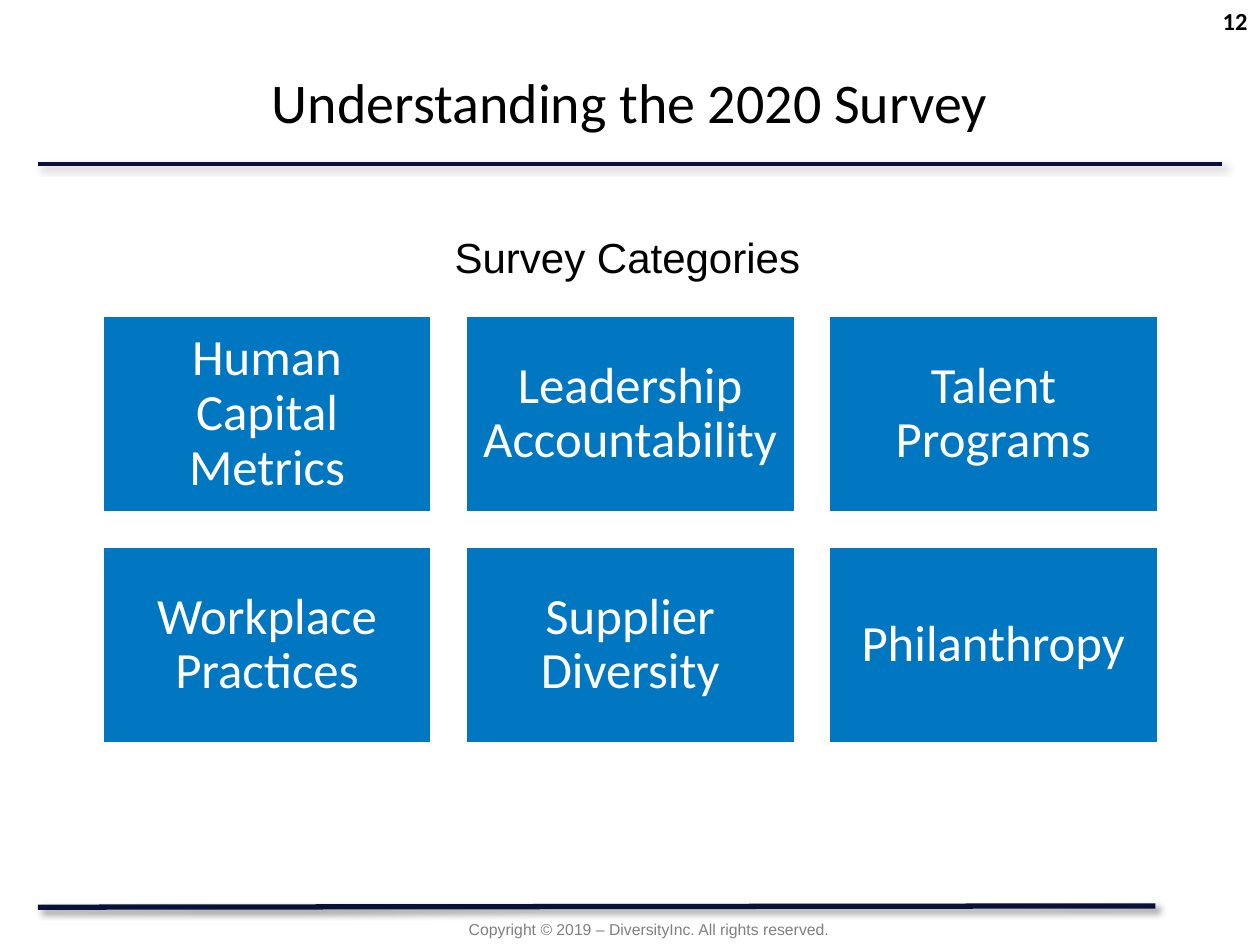
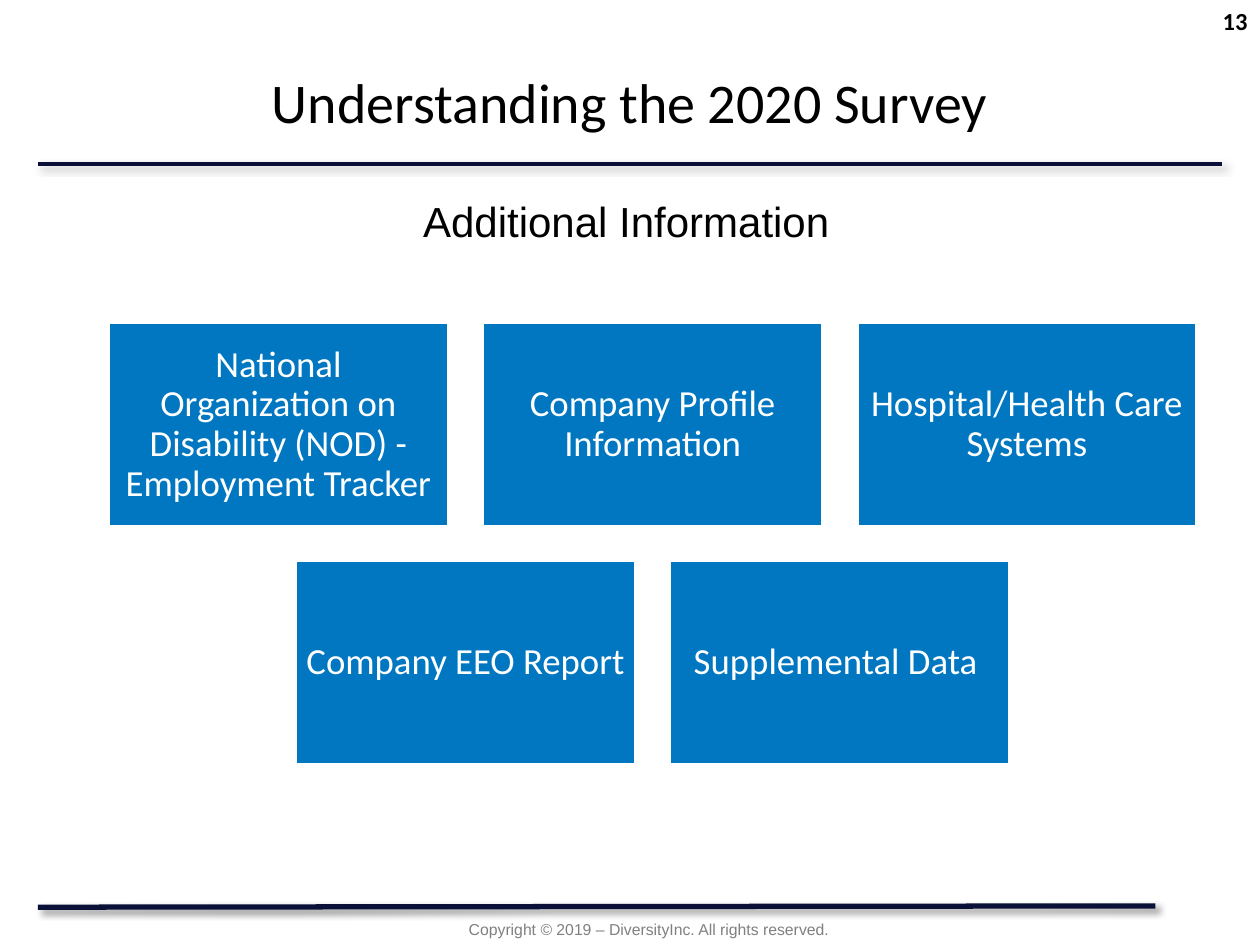
from dataclasses import dataclass

from lxml.etree import SubElement
from pptx import Presentation
from pptx.dml.color import RGBColor
from pptx.enum.shapes import MSO_CONNECTOR, MSO_SHAPE
from pptx.enum.text import MSO_ANCHOR, MSO_AUTO_SIZE, PP_ALIGN
from pptx.oxml.ns import qn
from pptx.util import Pt


@dataclass(frozen=True)
class Theme:
    navy: RGBColor = RGBColor(0x0A, 0x10, 0x37)
    blue: RGBColor = RGBColor(0x00, 0x77, 0xC0)
    gray: RGBColor = RGBColor(0x80, 0x80, 0x80)
    black: RGBColor = RGBColor(0, 0, 0)
    white: RGBColor = RGBColor(255, 255, 255)
    display_font: str = "Calibri"
    body_font: str = "Arial"
    title_size: float = 32
    heading_size: float = 24
    number_size: float = 14
    footer_size: float = 9
    category_size: float = 29
    information_size: float = 21


class SurveyDeck:
    """Build the survey slides in one shared style."""

    def __init__(self, theme):
        self.theme = theme
        self.presentation = Presentation()
        self.presentation.slide_width = Pt(720)
        self.presentation.slide_height = Pt(540)
        self.slide = None

    def add_slide(self, title, number):
        theme = self.theme
        self.slide = self.presentation.slides.add_slide(self.presentation.slide_layouts[5])
        self.rule((21.6, 518.4), (660.24, 517.68), 3)
        self.rule((21.6, 93.6), (698.4, 93.6), 2)
        self.text("Copyright © 2019 – DiversityInc. All rights reserved. ",
                  (237.6, 522, 245.52, 18), theme.footer_size, theme.body_font,
                  theme.gray, PP_ALIGN.RIGHT)
        self.title(title)
        self.text(str(number), (683.28, 0, 36.72, 37.44), theme.number_size,
                  theme.display_font, theme.black, PP_ALIGN.RIGHT, bold=True)

    def format_text(self, shape, text, size, font_name, color, alignment, bold=False):
        shape.text_frame.text = text
        paragraph = shape.text_frame.paragraphs[0]
        paragraph.alignment = alignment
        font = paragraph.runs[0].font
        font.name, font.size, font.bold = font_name, Pt(size), bold
        font.color.rgb = color
        return paragraph

    def title(self, text):
        shape = self.slide.shapes.title
        shape.left, shape.top, shape.width, shape.height = Pt(21.6), Pt(21.6), Pt(676.8), Pt(72)
        shape.text_frame.auto_size = MSO_AUTO_SIZE.NONE
        shape.text_frame.vertical_anchor = MSO_ANCHOR.MIDDLE
        self.format_text(shape, text, self.theme.title_size, self.theme.display_font,
                         self.theme.black, PP_ALIGN.CENTER)

    def text(self, text, box, size, font_name, color, alignment, bold=False, wrap=True):
        shape = self.slide.shapes.add_textbox(*map(Pt, box))
        shape.text_frame.word_wrap = wrap
        self.format_text(shape, text, size, font_name, color, alignment, bold)

    def heading(self, text, left, top, width):
        self.text(text, (left, top, width, 36), self.theme.heading_size,
                  self.theme.body_font, self.theme.black, PP_ALIGN.LEFT, wrap=False)

    def rule(self, start, end, weight):
        connector = self.slide.shapes.add_connector(
            MSO_CONNECTOR.STRAIGHT, *map(Pt, start + end))
        connector.line.color.rgb = self.theme.navy
        connector.line.width = Pt(weight)
        effects = SubElement(connector._element.spPr, qn("a:effectLst"))
        shadow = SubElement(effects, qn("a:outerShdw"), blurRad=str(Pt(4)),
                            dist=str(Pt(3)), dir="2700000", rotWithShape="0")
        color = SubElement(shadow, qn("a:srgbClr"), val=str(self.theme.black))
        SubElement(color, qn("a:alpha"), val="43000")

    def tile(self, text, left, top, width, height, size):
        shape = self.slide.shapes.add_shape(
            MSO_SHAPE.RECTANGLE, Pt(left), Pt(top), Pt(width), Pt(height))
        shape.shadow.inherit = False
        shape.fill.solid()
        shape.fill.fore_color.rgb = self.theme.blue
        shape.line.color.rgb = self.theme.white
        shape.line.width = Pt(2)
        frame = shape.text_frame
        frame.word_wrap = True
        frame.vertical_anchor = MSO_ANCHOR.MIDDLE
        frame.margin_left = frame.margin_right = Pt(size * 0.3)
        frame.margin_top = frame.margin_bottom = Pt(size * 0.3)
        paragraph = self.format_text(shape, text, size, self.theme.display_font,
                                     self.theme.white, PP_ALIGN.CENTER)
        paragraph.line_spacing = 0.9

    def tile_grid(self, rows, left, top, width, size):
        gap, height = width * 0.1, width * 0.6
        columns = max(map(len, rows))
        for row_index, labels in enumerate(rows):
            indent = (columns - len(labels)) * (width + gap) / 2
            for column, label in enumerate(labels):
                self.tile(label, left + indent + column * (width + gap),
                          top + row_index * (height + gap), width, height, size)


def main():
    theme = Theme()
    deck = SurveyDeck(theme)
    title = "Understanding the 2020 Survey"

    deck.add_slide(title, 12)
    deck.tile_grid([["Human Capital Metrics", "Leadership Accountability", "Talent Programs"],
                    ["Workplace Practices", "Supplier Diversity", "Philanthropy"]],
                   58.32, 180, 188.64, theme.category_size)
    deck.heading("Survey Categories", 252.72, 128.88, 213.84)

    deck.add_slide(title, 13)
    deck.tile_grid([["National Organization on Disability (NOD) - Employment Tracker",
                     "Company Profile Information", "Hospital/Health Care Systems"],
                    ["Company EEO Report", "Supplemental Data "]],
                   61.92, 184.32, 194.4, theme.information_size)
    deck.heading("Additional Information", 234.72, 108, 249.12)

    deck.presentation.save("out.pptx")


if __name__ == "__main__":
    main()
